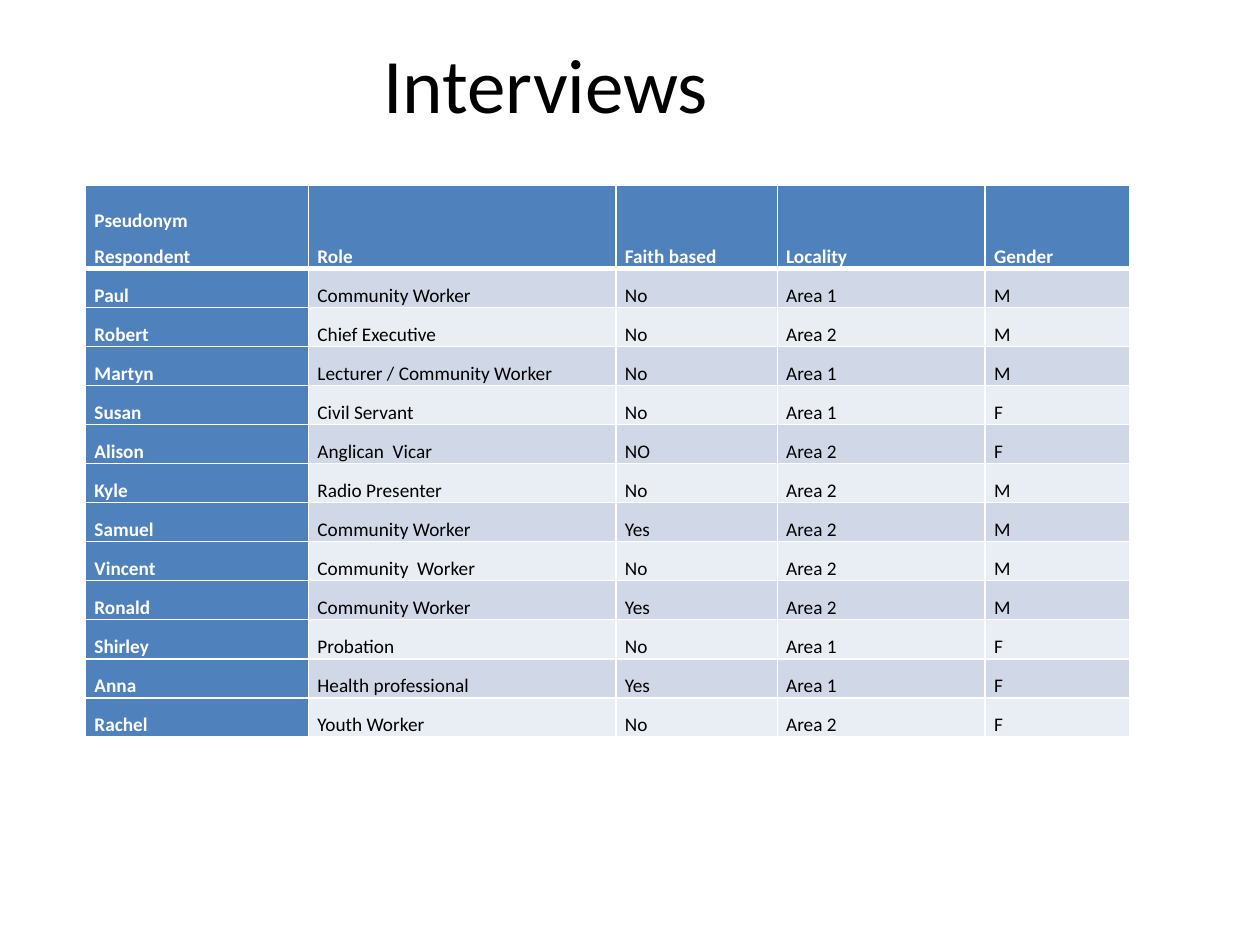
from typing import NamedTuple

from lxml.etree import SubElement
from pptx import Presentation
from pptx.dml.color import RGBColor
from pptx.enum.text import MSO_ANCHOR, PP_ALIGN
from pptx.oxml.ns import qn
from pptx.util import Inches, Pt

FONT = "Calibri"
WHITE, BLACK, BLUE = "FFFFFF", "000000", "4F81BD"
BANDS = ("D0D8E8", "E9EDF4")
COLUMN_WIDTHS = (1.77, 2.44, 1.28, 1.65, 1.15)
HEADER_HEIGHT, ROW_HEIGHT = 0.66, 0.31
THIN, THICK = 1, 3
TEXT_SIZE = 11


class Interview(NamedTuple):
    respondent: str
    role: str
    faith_based: str
    locality: str
    gender: str


HEADER = Interview("Pseudonym\vRespondent", "Role", "Faith based", "Locality", "Gender")
INTERVIEWS = [
    Interview("Paul", "Community Worker", "No", "Area 1", "M"),
    Interview("Robert", "Chief Executive", "No", "Area 2", "M"),
    Interview("Martyn", "Lecturer / Community Worker", "No", "Area 1", "M"),
    Interview("Susan", "Civil Servant", "No", "Area 1", "F"),
    Interview("Alison", "Anglican  Vicar", "NO", "Area 2", "F"),
    Interview("Kyle", "Radio Presenter", "No", "Area 2", "M"),
    Interview("Samuel", "Community Worker", "Yes", "Area 2", "M"),
    Interview("Vincent", "Community  Worker", "No", "Area 2", "M"),
    Interview("Ronald", "Community Worker", "Yes", "Area 2", "M"),
    Interview("Shirley", "Probation", "No", "Area 1", "F"),
    Interview("Anna", "Health professional", "Yes", "Area 1", "F"),
    Interview("Rachel", "Youth Worker", "No", "Area 2", "F"),
]


def color(value: str) -> RGBColor:
    return RGBColor.from_string(value)


def format_runs(paragraph, size: float, text_color: str, bold: bool = False) -> None:
    for run in paragraph.runs:
        run.font.name = FONT
        run.font.size = Pt(size)
        run.font.bold = bold
        run.font.color.rgb = color(text_color)
    # Line breaks carry their own size, which sets the line height
    for line_break in paragraph._p.findall(qn("a:br")):
        SubElement(line_break, qn("a:rPr"), sz=str(size * 100))


def set_borders(cell, top: float, bottom: float) -> None:
    """Draw white borders; call before the fill, which must follow them in the XML."""
    properties = cell._tc.get_or_add_tcPr()
    for side, width in (("L", THIN), ("R", THIN), ("T", top), ("B", bottom)):
        line = SubElement(properties, qn(f"a:ln{side}"), w=str(Pt(width)))
        fill = SubElement(line, qn("a:solidFill"))
        SubElement(fill, qn("a:srgbClr"), val=WHITE)


def fill_cell(cell, text: str, row: int, column: int) -> None:
    emphasized = row == 0 or column == 0
    set_borders(cell, THICK if row == 1 else THIN, THICK if row == 0 else THIN)
    cell.fill.solid()
    cell.fill.fore_color.rgb = color(BLUE if emphasized else BANDS[(row - 1) % 2])
    cell.vertical_anchor = MSO_ANCHOR.BOTTOM
    cell.margin_left = cell.margin_right = Inches(0.07)
    cell.margin_top = cell.margin_bottom = 0
    cell.text_frame.text = text
    paragraph = cell.text_frame.paragraphs[0]
    paragraph.alignment = PP_ALIGN.JUSTIFY
    paragraph.line_spacing = 1.5
    paragraph.space_after = Pt(10)
    format_runs(paragraph, TEXT_SIZE, WHITE if emphasized else BLACK, emphasized)


def add_title(slide, text: str) -> None:
    title = slide.shapes.title
    title.left, title.top = Inches(0.15), Inches(0.24)
    title.width, title.height = Inches(8.5), Inches(1.61)
    title.text_frame.text = text
    title.text_frame.vertical_anchor = MSO_ANCHOR.TOP
    paragraph = title.text_frame.paragraphs[0]
    paragraph.alignment = PP_ALIGN.CENTER
    format_runs(paragraph, 44, BLACK)


def add_interview_table(slide, rows: list[Interview]) -> None:
    heights = [HEADER_HEIGHT] + [ROW_HEIGHT] * (len(rows) - 1)
    table = slide.shapes.add_table(
        len(rows), len(COLUMN_WIDTHS), Inches(0.68), Inches(1.47),
        Inches(sum(COLUMN_WIDTHS)), Inches(sum(heights)),
    ).table
    table.first_col = True
    for column, width in zip(table.columns, COLUMN_WIDTHS):
        column.width = Inches(width)
    for row_index, (interview, height) in enumerate(zip(rows, heights)):
        table.rows[row_index].height = Inches(height)
        for column_index, text in enumerate(interview):
            fill_cell(table.cell(row_index, column_index), text, row_index, column_index)


def main() -> None:
    presentation = Presentation()
    presentation.slide_width, presentation.slide_height = Inches(10), Inches(7.5)
    slide = presentation.slides.add_slide(presentation.slide_layouts[0])
    subtitle = slide.placeholders[1].element
    subtitle.getparent().remove(subtitle)
    add_title(slide, "Interviews ")
    add_interview_table(slide, [HEADER, *INTERVIEWS])
    presentation.save("out.pptx")


if __name__ == "__main__":
    main()
